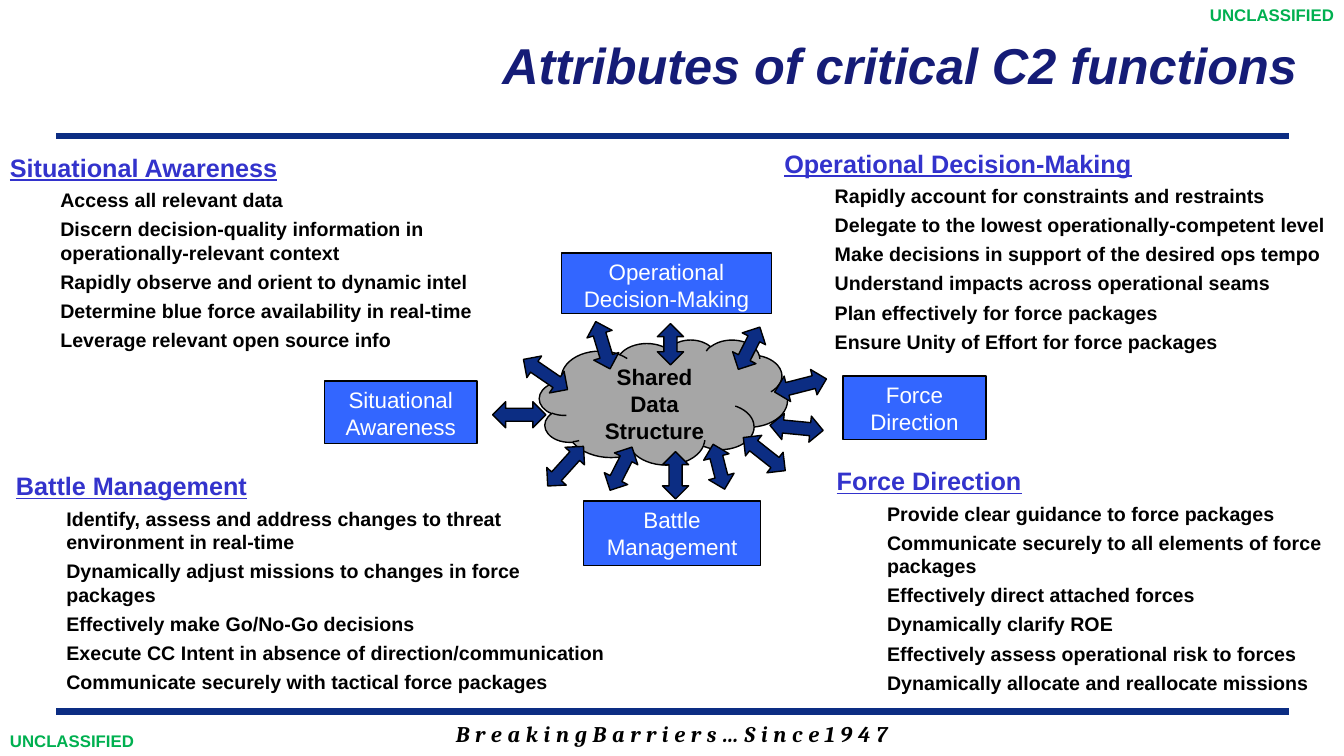
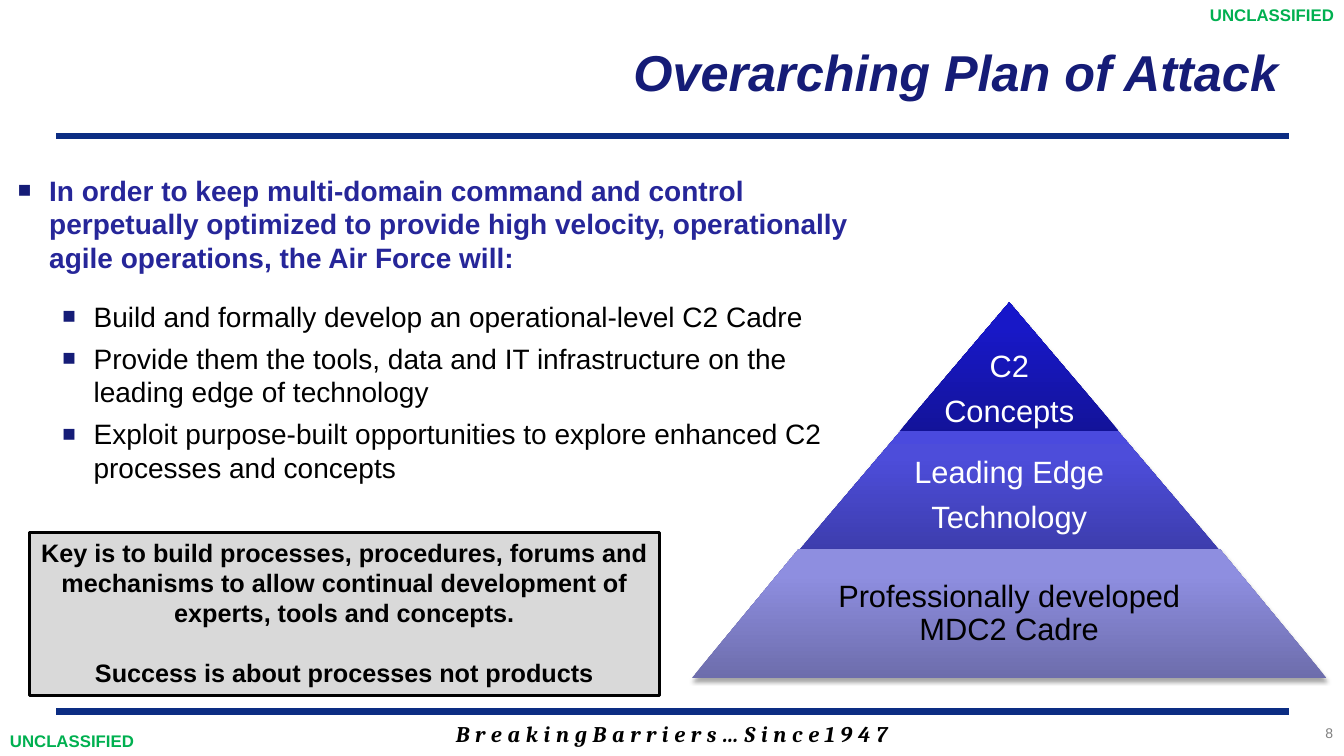
from copy import deepcopy

from lxml.etree import SubElement
from pptx import Presentation
from pptx.dml.color import RGBColor
from pptx.enum.shapes import MSO_CONNECTOR, MSO_SHAPE
from pptx.enum.text import MSO_ANCHOR, PP_ALIGN
from pptx.oxml.ns import qn
from pptx.util import Emu, Inches, Pt

COLORS = {
    "navy": "0C2D83", "title": "151C77", "green": "00B050", "heading": "3333CC",
    "lead": "262699", "box": "3366FF", "cloud": "A6A6A6", "callout": "D9D9D9",
    "black": "000000", "white": "FFFFFF", "gray": "808080",
}
RULE_LEFT, RULE_RIGHT, RULE_TOPS = 0.56, 12.78, (1.35, 7.06)
MARKING = "UNCLASSIFIED"
MOTTO = "B r e a k i n g B a r r i e r s … S i n c e 1 9 4 7"

# Left, top, width, height in inches, then the content
FUNCTION_LISTS = [
    ((0, 1.46, 5.38, 2.11), "Situational Awareness", [
        "Access all relevant data",
        "Discern decision-quality information in operationally-relevant context",
        "Rapidly observe and orient to dynamic intel",
        "Determine blue force availability in real-time",
        "Leverage relevant open source info"]),
    ((7.68, 1.42, 5.65, 2.17), "Operational Decision-Making", [
        "Rapidly account for constraints and restraints",
        "Delegate to the lowest operationally-competent level",
        "Make decisions in support of the desired ops tempo",
        "Understand impacts across operational seams",
        "Plan effectively for force packages",
        "Ensure Unity of Effort for force packages"]),
    ((8.2, 4.57, 5.13, 2.41), "Force Direction", [
        "Provide clear guidance to force packages",
        "Communicate securely to all elements of force packages",
        "Effectively direct attached forces",
        "Dynamically clarify ROE",
        "Effectively assess operational risk to forces",
        "Dynamically allocate and reallocate missions"]),
    ((0.06, 4.62, 6.1, 2.35), "Battle Management", [
        "Identify, assess and address changes to threat environment in real-time",
        "Dynamically adjust missions to changes in force packages",
        "Effectively make Go/No-Go decisions",
        "Execute CC Intent in absence of direction/communication",
        "Communicate securely with tactical force packages"]),
]
FUNCTION_BOXES = [
    ((5.79, 4.97, 1.75, 0.64), ["Battle Management"]),
    ((3.22, 3.78, 1.51, 0.62), ["Situational", "Awareness"]),
    ((5.57, 2.51, 2.08, 0.6), ["Operational", "Decision-Making"]),
    ((8.36, 3.73, 1.42, 0.63), ["Force", "Direction"]),
]
# Left, top, height, rotation
ARROW_WIDTH = 0.26
ARROWS = [
    (5.48, 4.36, 0.53, 42.1), (6.52, 3.21, 0.41, 0), (5.85, 3.18, 0.49, 343.2),
    (5.28, 3.45, 0.53, 124.4), (7.81, 3.56, 0.53, 75.7), (7.77, 3.98, 0.53, 95.5),
    (7.45, 4.24, 0.53, 128.3), (7, 4.4, 0.46, 165.6), (6.03, 4.41, 0.48, 27),
    (5.02, 3.85, 0.53, 90), (6.57, 4.48, 0.47, 180), (7.3, 3.22, 0.47, 27),
]

PLAN_LEAD = ("In order to keep multi-domain command and control perpetually optimized to "
             "provide high velocity, operationally agile operations, the Air Force will:")
PLAN_STEPS = [
    "Build and formally develop an operational-level C2 Cadre",
    "Provide them the tools, data and IT infrastructure on the leading edge of technology",
    "Exploit purpose-built opportunities to explore enhanced C2 processes and concepts",
]
CALLOUT = ["Key is to build processes, procedures, forums and mechanisms to allow "
           "continual development of experts, tools and concepts.",
           "Success is about processes not products"]
PYRAMID_CENTER, TIER_HEIGHT = 10.01, 1.28
GRADIENT_POSITIONS = (0, 0.8, 1)
# Top, half widths at top and bottom, gradient, text color, side inset, top inset, lines
TIERS = [
    (3, 0, 1.09, ("13139A", "1818C7", "1515CC"), "white", 0.03, 0.49, ["C2", "Concepts"]),
    (4.28, 1.08, 2.17, ("3B3BA8", "4D4DDA", "4A4ADE"), "white", 0.79, 0.03,
     ["Leading Edge", "Technology"]),
    (5.45, 2.09, 3.15, ("6D6DAC", "8E8EE0", "8D8DE2"), "black", 1.15, 0.03,
     ["Professionally developed MDC2 Cadre"]),
]


def rgb(name):
    return RGBColor.from_string(COLORS[name])


def add_bullet(paragraph):
    properties = paragraph._p.get_or_add_pPr()
    color = SubElement(properties, qn("a:buClr"))
    SubElement(color, qn("a:srgbClr"), val=COLORS["title"])
    SubElement(properties, qn("a:buSzPct"), val="80000")
    SubElement(properties, qn("a:buFont"), typeface="Arial")
    SubElement(properties, qn("a:buChar"), char="■")


def add_paragraph(frame, text, size=16, color="black", font="Arial", bold=False,
                  italic=False, underline=False, align=PP_ALIGN.LEFT, level=0, margin=0,
                  hanging=0, bullet=False, before=0, after=0, line_spacing=None, tracking=0):
    """Fill the frame's first paragraph if it is still empty, otherwise append one."""
    paragraph = frame.paragraphs[0]
    if paragraph.runs:
        paragraph = frame.add_paragraph()
    paragraph.alignment = align
    paragraph.level = level
    properties = paragraph._p.get_or_add_pPr()
    properties.set("marL", str(Inches(margin)))
    properties.set("indent", str(-Inches(hanging)))
    if bullet:
        add_bullet(paragraph)
    paragraph.space_before, paragraph.space_after = Pt(before), Pt(after)
    if line_spacing:
        paragraph.line_spacing = line_spacing
    run = paragraph.add_run()
    run.text = text
    run.font.name, run.font.size = font, Pt(size)
    run.font.bold, run.font.italic, run.font.underline = bold, italic, underline
    run.font.color.rgb = rgb(color)
    if tracking:
        run._r.get_or_add_rPr().set("spc", str(round(tracking * 100)))


def prepare_frame(shape, anchor=MSO_ANCHOR.TOP):
    frame = shape.text_frame
    frame.word_wrap = True
    frame.vertical_anchor = anchor
    return frame


def add_text(slide, box, *texts, anchor=MSO_ANCHOR.TOP, **style):
    frame = prepare_frame(slide.shapes.add_textbox(*map(Inches, box)), anchor)
    for text in texts:
        add_paragraph(frame, text, **style)
    return frame


def add_block(slide, kind, box, fill, line_width=1, texts=(), **style):
    shape = slide.shapes.add_shape(kind, *map(Inches, box))
    shape.shadow.inherit = False
    shape.fill.solid()
    shape.fill.fore_color.rgb = rgb(fill)
    shape.line.color.rgb = rgb("black")
    shape.line.width = Pt(line_width)
    frame = prepare_frame(shape)
    for text in texts:
        add_paragraph(frame, text, align=PP_ALIGN.CENTER, **style)
    return shape


def add_framed_slide(presentation, title, title_box):
    """Add a blank slide with the shared motto, rules, markings and title."""
    slide = presentation.slides.add_slide(presentation.slide_layouts[6])
    add_text(slide, (1.89, 7.1, 9.56, 0.37), MOTTO, font="Cambria", bold=True, italic=True,
             align=PP_ALIGN.CENTER, tracking=0.3)
    for top in reversed(RULE_TOPS):
        rule = slide.shapes.add_connector(
            MSO_CONNECTOR.STRAIGHT, Inches(RULE_LEFT), Inches(top), Inches(RULE_RIGHT), Inches(top))
        rule.line.color.rgb = rgb("navy")
        rule.line.width = Pt(4.5)
        SubElement(rule._element.spPr, qn("a:effectLst"))
    for left, top, align in ((0, 7.2, PP_ALIGN.LEFT), (10.44, 0, PP_ALIGN.RIGHT)):
        add_text(slide, (left, top, 2.89, 0.3), MARKING, size=12, color="green", bold=True,
                 align=align)
    add_text(slide, title_box, title, anchor=MSO_ANCHOR.MIDDLE, size=36, color="title",
             bold=True, italic=True, align=PP_ALIGN.RIGHT)
    return slide


def add_tier(slide, top, half_top, half_bottom, gradient, color, side_inset, top_inset, lines):
    bottom = top + TIER_HEIGHT
    corners = [(PYRAMID_CENTER + offset, y) for offset, y in (
        (-half_bottom, bottom), (-half_top, top), (half_top, top), (half_bottom, bottom))]
    points = [(Inches(x), Inches(y)) for x, y in corners]
    builder = slide.shapes.build_freeform(*points[0])
    builder.add_line_segments(points[1:], close=True)
    tier = builder.convert_to_shape()
    tier.line.fill.background()

    tier.fill.gradient()
    tier.fill.gradient_angle = 90
    stops = tier._element.spPr.find(".//" + qn("a:gsLst"))
    stops.append(deepcopy(stops[-1]))
    for stop, position, value in zip(tier.fill.gradient_stops, GRADIENT_POSITIONS, gradient):
        stop.position = position
        stop.color.rgb = RGBColor.from_string(value)

    tier.shadow.inherit = False
    shadow = SubElement(tier._element.spPr.find(qn("a:effectLst")), qn("a:outerShdw"),
                        blurRad=str(Pt(3.1)), dist=str(Pt(1.8)), dir="5400000", rotWithShape="0")
    shadow_color = SubElement(shadow, qn("a:srgbClr"), val=COLORS["black"])
    SubElement(shadow_color, qn("a:alpha"), val="35000")

    frame = prepare_frame(tier, MSO_ANCHOR.MIDDLE)
    frame.margin_left = frame.margin_right = Inches(side_inset)
    frame.margin_top, frame.margin_bottom = Inches(top_inset), Inches(0.03)
    for line in lines:
        add_paragraph(frame, line, size=22, color=color, align=PP_ALIGN.CENTER,
                      line_spacing=0.9, after=8.5)


def build_attributes_slide(presentation):
    slide = add_framed_slide(presentation, "Attributes of critical C2 functions",
                             (3.9, 0.01, 9.07, 1.25))
    add_block(slide, MSO_SHAPE.CLOUD, (5.35, 3.37, 2.46, 1.24), "cloud",
              texts=["Shared", "Data Structure"], bold=True)
    for box, lines in FUNCTION_BOXES:
        add_block(slide, MSO_SHAPE.RECTANGLE, box, "box", texts=lines, color="white")
    for left, top, height, rotation in ARROWS:
        arrow = add_block(slide, MSO_SHAPE.UP_DOWN_ARROW, (left, top, ARROW_WIDTH, height), "navy")
        arrow.rotation = rotation
    for box, heading, items in FUNCTION_LISTS:
        frame = add_text(slide, box, heading, size=18, color="heading", bold=True, underline=True)
        for item in items:
            add_paragraph(frame, item, size=14, bold=True, level=1, margin=0.5, before=4)


def build_plan_slide(presentation):
    slide = add_framed_slide(presentation, "Overarching Plan of Attack", (2.36, 0.08, 10.42, 1.25))
    frame = add_text(slide, (0.08, 1.67, 8.53, 3.2), PLAN_LEAD, size=20, color="lead", bold=True,
                     margin=0.31, hanging=0.31, bullet=True)
    for index, step in enumerate(PLAN_STEPS):
        add_paragraph(frame, step, size=20, level=1, margin=0.75, hanging=0.31, bullet=True,
                      before=6 if index else 18)
    add_text(slide, (11.65, 7.14, 1.67, 0.33), "8", size=10, color="gray", align=PP_ALIGN.RIGHT)
    for tier in TIERS:
        add_tier(slide, *tier)
    callout = add_block(slide, MSO_SHAPE.RECTANGLE, (0.29, 5.28, 6.25, 1.62), "callout", 2.25,
                        CALLOUT, size=18, bold=True)
    callout.text_frame.paragraphs[1].space_before = Pt(21)


def main():
    presentation = Presentation()
    presentation.slide_width, presentation.slide_height = Inches(13.33), Inches(7.5)
    build_attributes_slide(presentation)
    build_plan_slide(presentation)
    presentation.save("out.pptx")


if __name__ == "__main__":
    main()
